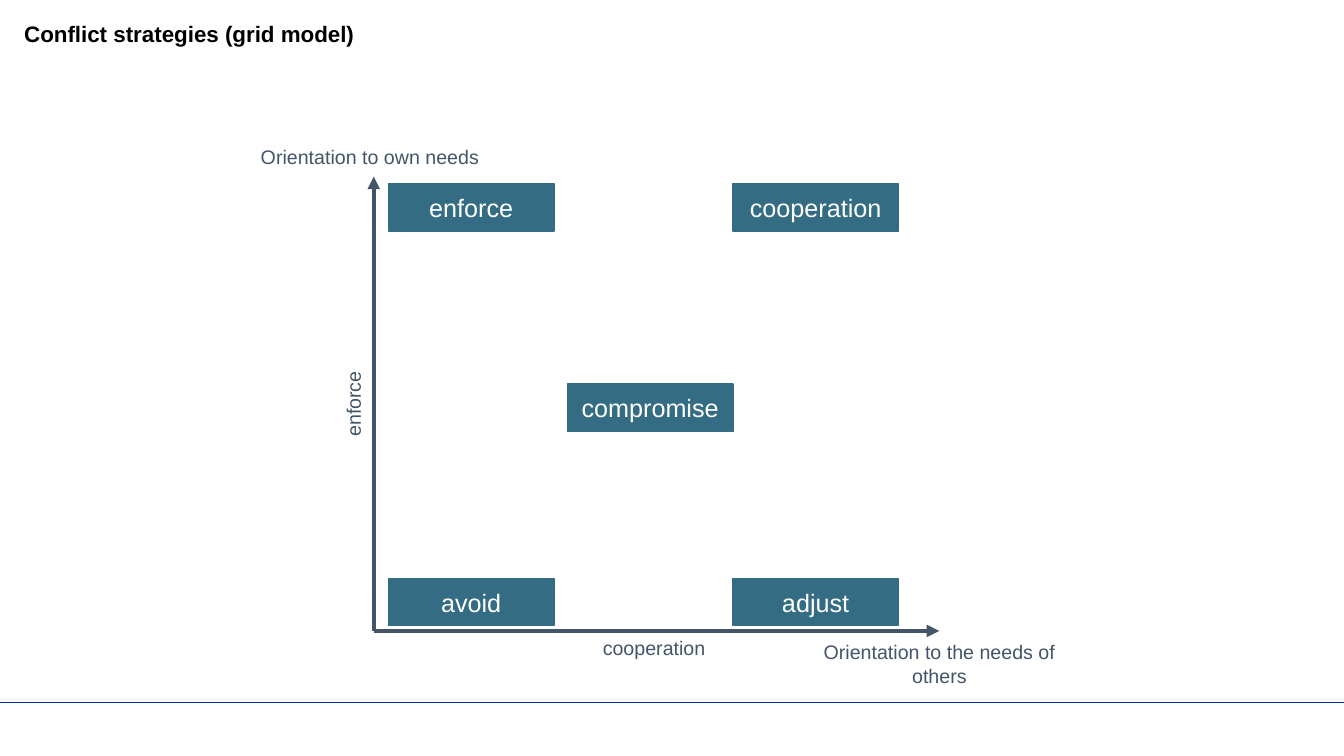
from dataclasses import dataclass

import pptx
import pptx.dml.color
import pptx.enum.shapes
import pptx.enum.text
import pptx.oxml
import pptx.oxml.ns
import pptx.util
from pptx.util import Cm

FONT = "Arial"
SLATE, TEAL, WHITE, BLACK, BLUE = "445469", "346C84", "FFFFFF", "000000", "003399"
BOX_W, BOX_H = 4.17, 1.19
LEFT, MIDDLE, RIGHT = 9.79, 14.3, 18.47
TOP, CENTRE, BOTTOM = 4.63, 9.68, 14.58
ORIGIN_X, ORIGIN_Y = 9.42, 15.9


@dataclass
class Line:
    x1: float
    y1: float
    x2: float
    y2: float
    color: str
    width: float
    arrow: bool = False


@dataclass
class Label:
    text: str
    x: float
    y: float
    w: float
    h: float = 0.86
    rotation: float = 0


@dataclass
class Strategy:
    text: str
    x: float
    y: float


LINES = [
    Line(0, 17.7, 33.87, 17.7, BLUE, 1),
    Line(ORIGIN_X, ORIGIN_Y, ORIGIN_X, 4.45, SLATE, 3, True),
    Line(ORIGIN_X, ORIGIN_Y, 23.67, ORIGIN_Y, SLATE, 3, True),
]
LABELS = [
    Label("Orientation to own needs", 5.77, 3.53, 7.11),
    Label("Orientation to the needs of others", 19.89, 16, 7.57, 1.45),
    Label("enforce", 5.59, 9.75, 6.63, rotation=270),
    Label("cooperation", 12.93, ORIGIN_Y, 7.11),
]
STRATEGIES = [
    Strategy("enforce", LEFT, TOP),
    Strategy("cooperation", RIGHT, TOP),
    Strategy("compromise", MIDDLE, CENTRE),
    Strategy("avoid", LEFT, BOTTOM),
    Strategy("adjust", RIGHT, BOTTOM),
]


def rgb(color: str) -> pptx.dml.color.RGBColor:
    return pptx.dml.color.RGBColor.from_string(color)


def write(sp, text: str, size: float, color: str, bold: bool = False,
          align=pptx.enum.text.PP_ALIGN.CENTER):
    tf = sp.text_frame
    tf.word_wrap = True
    p = tf.paragraphs[0]
    p.alignment = align
    r = p.add_run()
    r.text = text
    r.font.name = FONT
    r.font.size = pptx.util.Pt(size)
    r.font.bold = bold
    r.font.color.rgb = rgb(color)
    return tf


def add_line(s, line: Line) -> None:
    sp = s.shapes.add_connector(
        pptx.enum.shapes.MSO_CONNECTOR.STRAIGHT,
        Cm(line.x1), Cm(line.y1), Cm(line.x2), Cm(line.y2))
    sp.line.color.rgb = rgb(line.color)
    sp.line.width = pptx.util.Pt(line.width)
    if line.arrow:
        tail = pptx.oxml.parse_xml(
            f'<a:tailEnd {pptx.oxml.ns.nsdecls("a")} type="triangle"/>')
        sp.line._get_or_add_ln().append(tail)
    sp._element.spPr.append(
        pptx.oxml.parse_xml(f'<a:effectLst {pptx.oxml.ns.nsdecls("a")}/>'))


def add_label(s, label: Label) -> None:
    sp = s.shapes.add_textbox(Cm(label.x), Cm(label.y), Cm(label.w), Cm(label.h))
    sp.rotation = label.rotation
    write(sp, label.text, 14, SLATE)


def add_strategy(s, strategy: Strategy) -> None:
    sp = s.shapes.add_shape(
        pptx.enum.shapes.MSO_SHAPE.RECTANGLE,
        Cm(strategy.x), Cm(strategy.y), Cm(BOX_W), Cm(BOX_H))
    sp.shadow.inherit = False
    sp.fill.solid()
    sp.fill.fore_color.rgb = rgb(TEAL)
    sp.line.color.rgb = rgb(TEAL)
    sp.line.width = pptx.util.Pt(1)
    tf = write(sp, strategy.text, 18, WHITE)
    tf.vertical_anchor = pptx.enum.text.MSO_ANCHOR.MIDDLE


def add_title(s, text: str) -> None:
    sp = s.shapes.add_textbox(Cm(0.61), Cm(0.51), Cm(23.9), Cm(1.6))
    tf = write(sp, text, 16, BLACK, True, pptx.enum.text.PP_ALIGN.LEFT)
    tf.margin_left = tf.margin_top = tf.margin_right = tf.margin_bottom = 0


def main() -> None:
    prs = pptx.Presentation()
    prs.slide_width, prs.slide_height = Cm(33.87), Cm(19.05)
    s = prs.slides.add_slide(prs.slide_layouts[6])

    # Footer rule and the two axes
    for line in LINES:
        add_line(s, line)

    # Axis labels
    for label in LABELS:
        add_label(s, label)

    # Conflict strategies
    for strategy in STRATEGIES:
        add_strategy(s, strategy)

    # Title
    add_title(s, "Conflict strategies (grid model)")

    prs.save("out.pptx")


if __name__ == "__main__":
    main()
